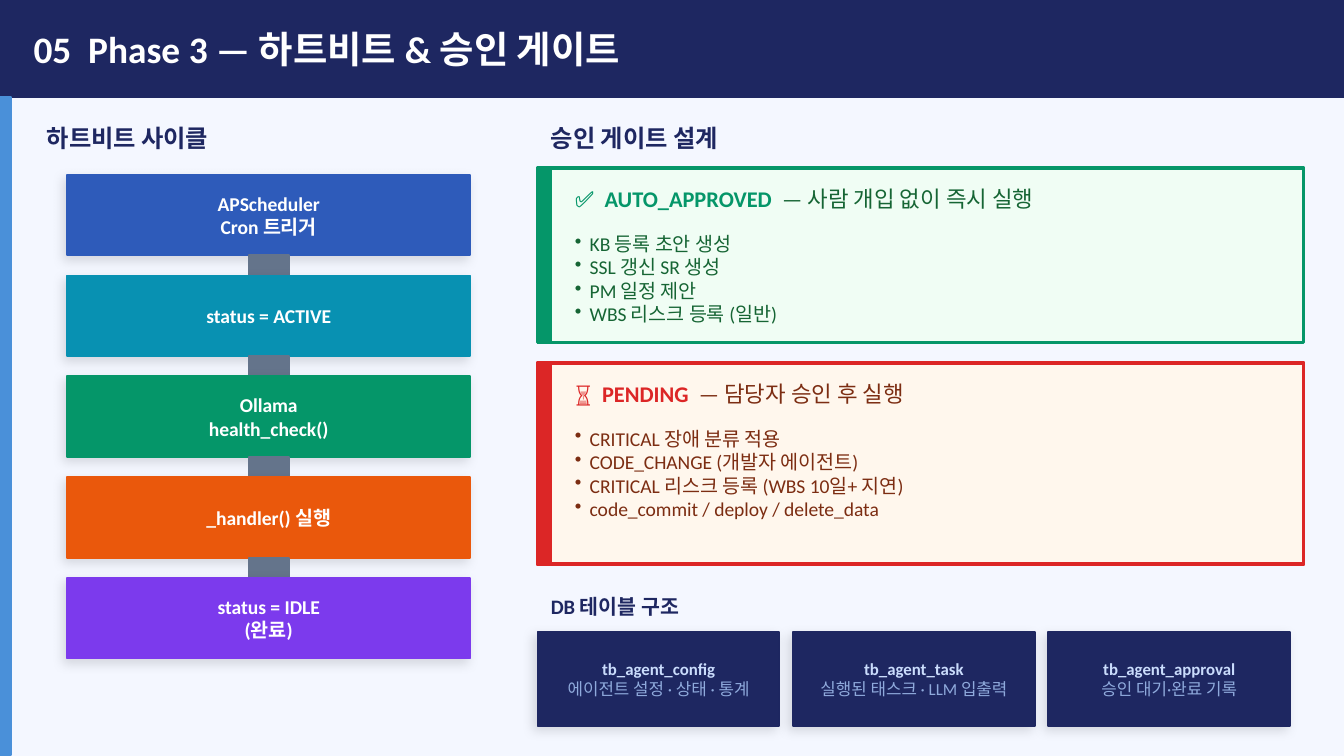
from lxml import etree
from pptx import Presentation
from pptx.dml.color import RGBColor as Color
from pptx.enum.shapes import MSO_SHAPE as Preset
from pptx.enum.text import MSO_ANCHOR as Anchor, PP_ALIGN as Align
from pptx.oxml import parse_xml
from pptx.oxml.ns import nsdecls, qn
from pptx.util import Inches, Pt

COLORS = {
    "background": "F4F7FF", "navy": "1E2761", "accent": "4A90D9", "white": "FFFFFF",
    "blue": "2E5BBA", "cyan": "0891B2", "green": "059669", "orange": "EA580C",
    "violet": "7C3AED", "slate": "64748B", "mint": "F0FDF4", "forest": "166534",
    "red": "DC2626", "cream": "FFF7ED", "brown": "7C2D12",
    "ice": "CADCFC", "steel": "8FAADC",
}

# Grid: 100 columns by 56.25 rows of equal square cells
COLUMNS, ROWS = 100, 56.25
CELL = Inches(0.1)
SHADOW = (
    f'<a:effectLst {nsdecls("a")}><a:outerShdw blurRad="76200" dist="38100" dir="8100000">'
    '<a:srgbClr val="000000"><a:alpha val="12000"/></a:srgbClr></a:outerShdw></a:effectLst>'
)

presentation = Presentation()
presentation.slide_width = int(COLUMNS * CELL)
presentation.slide_height = int(ROWS * CELL)
slide = presentation.slides.add_slide(presentation.slide_layouts[6])
slide.background.fill.solid()
slide.background.fill.fore_color.rgb = Color.from_string(COLORS["background"])


def add_box(left, top, width, height, fill, line=None, weight=1, shadow=False):
    """Add a rectangle placed in grid cells."""
    place = [int(value * CELL) for value in (left, top, width, height)]
    shape = slide.shapes.add_shape(Preset.RECTANGLE, *place)
    shape.fill.solid()
    shape.fill.fore_color.rgb = Color.from_string(COLORS[fill])
    shape.line.color.rgb = Color.from_string(COLORS[line or fill])
    shape.line.width = Pt(weight)
    shape.shadow.inherit = False
    if shadow:
        properties = shape._element.spPr
        properties.replace(properties.find(qn("a:effectLst")), parse_xml(SHADOW))
    return shape


def write(target, paragraphs, size, align=Align.LEFT, anchor=Anchor.MIDDLE,
          inset=None, bullet=False):
    """Write paragraphs of (text, color, bold) runs in a shape or a new text box."""
    if isinstance(target, tuple):
        target = slide.shapes.add_textbox(*[int(value * CELL) for value in target])
    frame = target.text_frame
    frame.word_wrap = True
    frame.vertical_anchor = anchor
    if inset is not None:
        frame.margin_left = frame.margin_right = int(inset * CELL)
        frame.margin_top = frame.margin_bottom = 0
    for index, runs in enumerate(paragraphs):
        paragraph = frame.paragraphs[0] if index == 0 else frame.add_paragraph()
        paragraph.alignment = align
        if bullet:
            properties = paragraph._p.get_or_add_pPr()
            properties.set("marL", str(Inches(0.11)))
            properties.set("indent", str(-Inches(0.11)))
            etree.SubElement(properties, qn("a:buChar")).set("char", "•")
        for text, color, bold in runs:
            run = paragraph.add_run()
            run.text = text
            run.font.name = "Calibri"
            run.font.size = Pt(size)
            run.font.bold = bold
            run.font.color.rgb = Color.from_string(COLORS[color])


# Title bar and side stripe
bar_height = 7.2
add_box(0, 0, COLUMNS, bar_height, "navy")
add_box(0, bar_height, 0.8, 49, "accent")
write((2.5, 0, 95, bar_height), [[("05  Phase 3 — 하트비트 & 승인 게이트", "white", True)]],
      20, inset=0)

# Section headings
right, right_width = 40, 57
headings = [
    ("하트비트 사이클", 2.5, 8.5, 47, 3.5, 13),
    ("승인 게이트 설계", right, 8.5, right_width, 3.5, 13),
    ("DB 테이블 구조", right, 43.5, right_width, 3.2, 11),
]
for text, left, top, width, height, size in headings:
    write((left, top, width, height), [[(text, "navy", True)]], size)

# Heartbeat cycle: equal steps joined by short bars
steps = [
    (["APScheduler", "Cron 트리거"], "blue"),
    (["status = ACTIVE"], "cyan"),
    (["Ollama", "health_check()"], "green"),
    (["_handler() 실행"], "orange"),
    (["status = IDLE", "(완료)"], "violet"),
]
step_left, step_width, step_height, joint_width, joint_height = 5, 30, 6, 3, 1.5
for index, (lines, color) in enumerate(steps):
    top = 13 + index * (step_height + joint_height)
    if index:
        add_box(step_left + (step_width - joint_width) / 2, top - joint_height,
                joint_width, joint_height, "slate")
    step = add_box(step_left, top, step_width, step_height, color, shadow=True)
    write(step, [[(line, "white", True)] for line in lines], 10.5, Align.CENTER, inset=0)

# Approval gate panels
panels = [
    (12.5, 13, "mint", "green", "forest", "✅  AUTO_APPROVED  ", "— 사람 개입 없이 즉시 실행",
     ["KB 등록 초안 생성", "SSL 갱신 SR 생성", "PM 일정 제안", "WBS 리스크 등록 (일반)"]),
    (27, 15, "cream", "red", "brown", "⏳  PENDING  ", "— 담당자 승인 후 실행",
     ["CRITICAL 장애 분류 적용", "CODE_CHANGE (개발자 에이전트)",
      "CRITICAL 리스크 등록 (WBS 10일+ 지연)", "code_commit / deploy / delete_data"]),
]
for top, height, fill, accent, ink, status, rule, items in panels:
    add_box(right, top, right_width, height, fill, accent, weight=2)
    add_box(right, top, 1, height, accent)
    write((right + 1.8, top + 0.5, 54, 3.5), [[(status, accent, True), (rule, ink, False)]], 12)
    write((right + 1.8, top + 4.25, 54, height - 4.8), [[(item, ink, False)] for item in items],
          10.5, anchor=Anchor.TOP, bullet=True)

# Database table cards
cards = [
    ("tb_agent_config", "에이전트 설정 · 상태 · 통계"),
    ("tb_agent_task", "실행된 태스크 · LLM 입출력"),
    ("tb_agent_approval", "승인 대기·완료 기록"),
]
card_width, card_gap = 18, 1
for index, (name, purpose) in enumerate(cards):
    card = add_box(right + index * (card_width + card_gap), 47, card_width, 7, "navy", shadow=True)
    write(card, [[(name, "ice", True)], [(purpose, "steel", False)]], 9, Align.CENTER, inset=1.5)

presentation.save("out.pptx")
